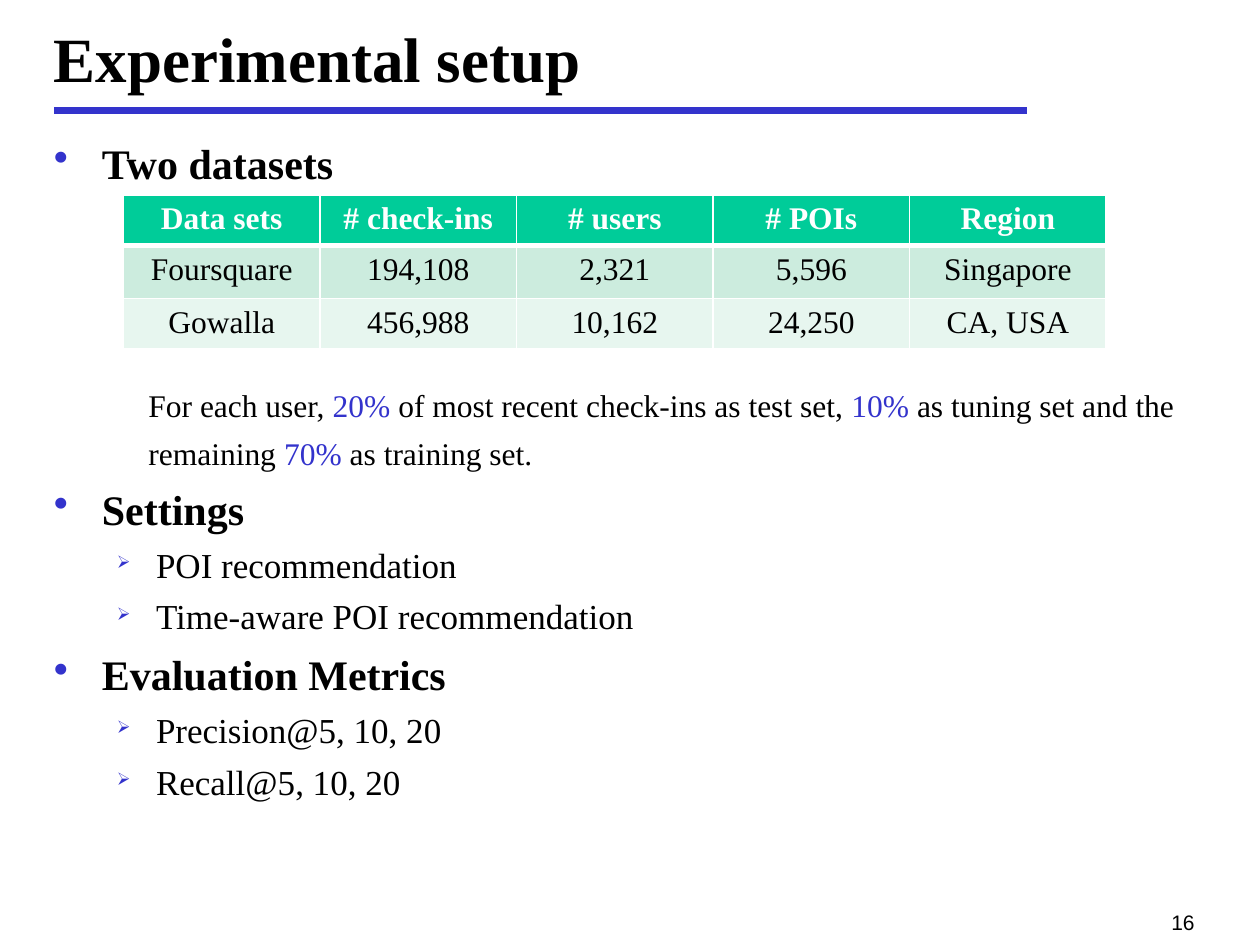
from dataclasses import dataclass
from itertools import product

from lxml import etree
from pptx import Presentation
from pptx.dml.color import RGBColor
from pptx.enum.shapes import MSO_CONNECTOR
from pptx.enum.text import MSO_ANCHOR, PP_ALIGN
from pptx.oxml.ns import qn
from pptx.util import Inches, Pt

LEFT, MID, RIGHT = PP_ALIGN.LEFT, PP_ALIGN.CENTER, PP_ALIGN.RIGHT
TOP, CENTER = MSO_ANCHOR.TOP, MSO_ANCHOR.MIDDLE
LINE = MSO_CONNECTOR.STRAIGHT
COLS, ROWS = 100, 75
BLUE, BLACK, WHITE, GREEN = "3333CC", "000000", "FFFFFF", "00CC99"
BANDS = "CCECDE", "E7F6EF"
SERIF, SANS = "Times New Roman", "Arial"

HEAD = {"size": 24, "bold": True, "mark": "•", "scale": 100,
        "left": 0.38, "hang": 0.38, "before": 4, "line": 1.1}
ITEM = {"size": 20, "bold": False, "mark": "➢", "scale": 50,
        "left": 0.81, "hang": 0.31, "before": 3, "line": 1.1}
NOTE = {"size": 18, "bold": False, "left": 0.75, "before": 107.5, "line": 1.27}

BODY = [
    ("Two datasets", {**HEAD, "before": 0}),
    ([("For each user, ", BLACK), ("20% ", BLUE),
      ("of most recent check-ins as test set, ", BLACK), ("10% ", BLUE),
      ("as tuning set and the remaining ", BLACK), ("70% ", BLUE),
      ("as training set.", BLACK)], NOTE),
    ("Settings", HEAD),
    ("POI recommendation", ITEM),
    ("Time-aware POI recommendation", ITEM),
    ("Evaluation Metrics", HEAD),
    ("Precision@5, 10, 20", ITEM),
    ("Recall@5, 10, 20", ITEM),
]
DATA = [
    ["Data sets", "# check-ins", "# users", "# POIs", "Region"],
    ["Foursquare", "194,108", "2,321", "5,596", "Singapore"],
    ["Gowalla", "456,988", "10,162", "24,250", "CA, USA"],
]


def tint(code):
    """Turn a hex string into a colour."""
    return RGBColor.from_string(code)


def apply(item, values):
    """Set each named value on an item."""
    for name, value in values.items():
        setattr(item, name, value)


@dataclass
class Deck:
    """Hold the page style and the current slide."""
    show: object
    slide: object = None
    font: str = SERIF

    def page(self):
        """Start a blank slide."""
        self.slide = self.show.slides.add_slide(self.show.slide_layouts[6])

    def spot(self, col, row):
        """Turn a grid place into lengths."""
        return (int(self.show.slide_width * col / COLS),
                int(self.show.slide_height * row / ROWS))

    def rule(self, start, end, color, width):
        """Draw a straight line."""
        line = self.slide.shapes.add_connector(
            LINE, *self.spot(*start), *self.spot(*end))
        line.line.color.rgb = tint(color)
        line.line.width = Pt(width)
        etree.SubElement(line._element.spPr, qn("a:effectLst"))

    def bullet(self, para, form):
        """Set the indent and the bullet of a paragraph."""
        props = para._p.get_or_add_pPr()
        props.set("marL", str(Inches(form.get("left", 0))))
        props.set("indent", str(-Inches(form.get("hang", 0))))
        if "mark" in form:
            color = etree.SubElement(props, qn("a:buClr"))
            etree.SubElement(color, qn("a:srgbClr"), val=BLUE)
            etree.SubElement(props, qn("a:buSzPct"), val=str(form["scale"] * 1000))
            etree.SubElement(props, qn("a:buChar"), char=form["mark"])

    def fill(self, para, text, form):
        """Fill a paragraph with styled runs."""
        self.bullet(para, form)
        apply(para, {"alignment": form.get("align", LEFT),
                     "space_before": Pt(form.get("before", 0)),
                     "line_spacing": form.get("line", 1.0)})
        runs = [(text, form.get("color", BLACK))] if isinstance(text, str) else text
        for words, color in runs:
            run = para.add_run()
            run.text = words
            apply(run.font, {"name": form.get("font", self.font),
                             "size": Pt(form["size"]),
                             "bold": form.get("bold", False)})
            run.font.color.rgb = tint(color)

    def text(self, place, size, lines, anchor=TOP):
        """Add a text box of styled paragraphs."""
        box = self.slide.shapes.add_textbox(*self.spot(*place), *self.spot(*size))
        frame = box.text_frame
        apply(frame, {"word_wrap": True, "vertical_anchor": anchor})
        for index, (words, form) in enumerate(lines):
            para = frame.add_paragraph() if index else frame.paragraphs[0]
            self.fill(para, words, form)

    def edge(self, cell, widths):
        """Draw the four borders of a cell."""
        props = cell._tc.get_or_add_tcPr()
        for index, (side, width) in enumerate(zip("LRTB", widths)):
            line = etree.Element(qn(f"a:ln{side}"), w=str(Pt(width)))
            paint = etree.SubElement(line, qn("a:solidFill"))
            etree.SubElement(paint, qn("a:srgbClr"), val=WHITE)
            props.insert(index, line)

    def table(self, place, size, data, heights):
        """Add a table with a header and tinted rows."""
        count, wide = len(data), len(data[0])
        grid = self.slide.shapes.add_table(
            count, wide, *self.spot(*place), *self.spot(*size)).table
        for row, height in zip(grid.rows, heights):
            row.height = self.spot(0, height)[1]
        for row, col in product(range(count), range(wide)):
            cell, top = grid.cell(row, col), row == 0
            cell.fill.solid()
            cell.fill.fore_color.rgb = tint(GREEN if top else BANDS[(row - 1) % 2])
            self.edge(cell, (1, 1, 3 if row == 1 else 1, 3 if top else 1))
            form = {"size": 18, "bold": top, "align": MID,
                    "color": WHITE if top else BLACK}
            self.fill(cell.text_frame.paragraphs[0], data[row][col], form)


def main():
    """Build the slide and save it."""
    show = Presentation()
    apply(show, {"slide_width": Inches(10), "slide_height": Inches(7.5)})
    deck = Deck(show)
    deck.page()
    deck.rule((4.3, 8.8), (81.5, 8.8), BLUE, 4)
    deck.text((3.3, 0.4), (79.8, 8.3),
              [("Experimental setup", {"size": 36, "bold": True})], CENTER)
    deck.text((3.3, 10), (92.5, 59.2), BODY)
    deck.text((89.2, 71.7), (6.6, 2.5),
              [("16", {"size": 12, "font": SANS, "align": RIGHT})])
    deck.table((9.8, 15.5), (78, 11.8), DATA, (3.8, 4.2, 3.8))
    show.save("out.pptx")


if __name__ == "__main__":
    main()
